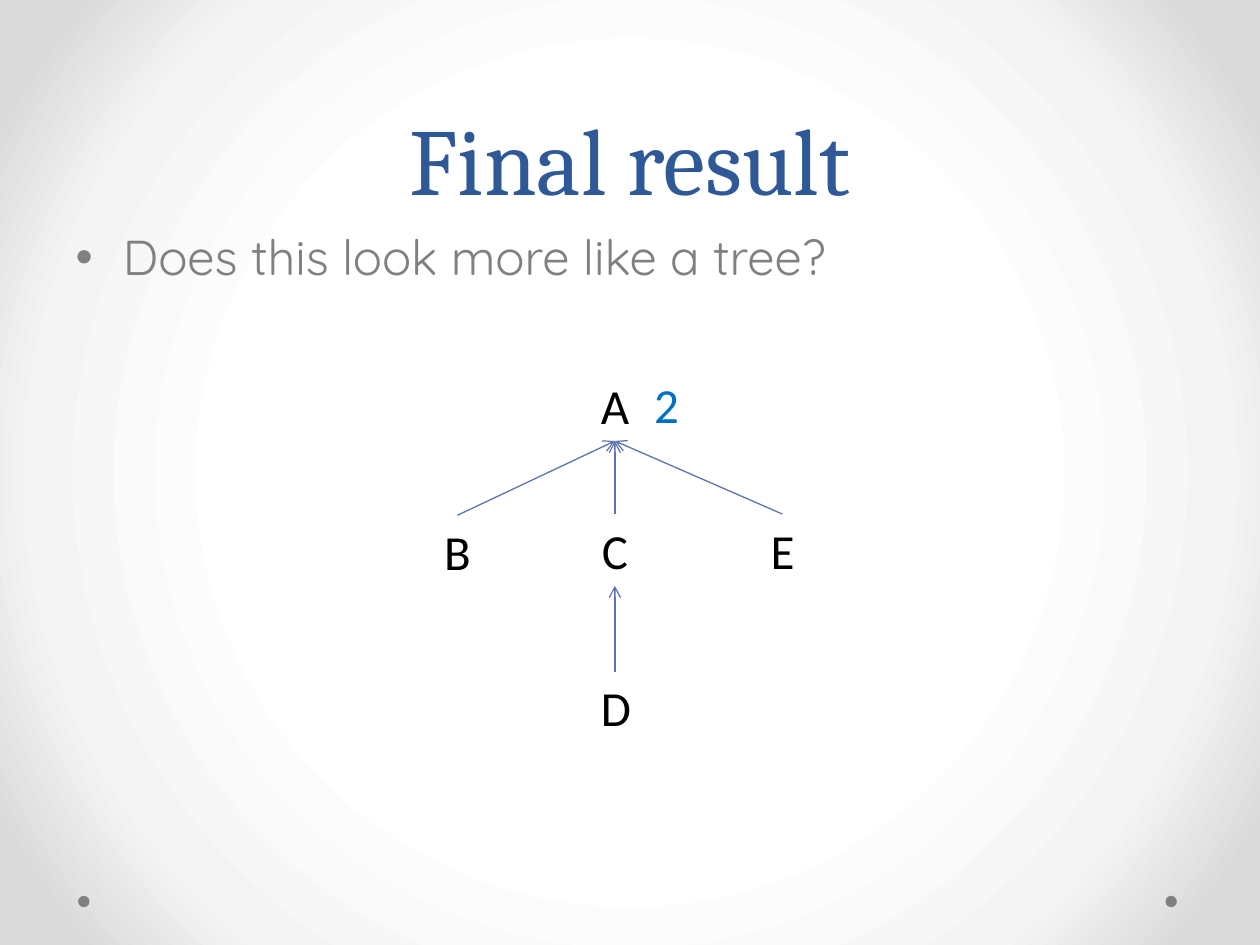
import pptx
import pptx.dml.color
import pptx.enum.shapes
import pptx.enum.text
import pptx.oxml
import pptx.oxml.ns
import pptx.util
from lxml import etree

Inches = pptx.util.Inches
RGBColor = pptx.dml.color.RGBColor
qn = pptx.oxml.ns.qn

NAVY = RGBColor(0x2F, 0x58, 0x97)
GRAY = RGBColor(0x80, 0x80, 0x80)
BLACK = RGBColor(0, 0, 0)
BLUE = RGBColor(0x00, 0x70, 0xC0)
ARROW = RGBColor(0x5C, 0x72, 0xB2)
BACKGROUND_STOPS = [(50, "FFFFFF"), (76, "F4F4F4"), (92, "DADADA")]

LABEL_WIDTH, LABEL_HEIGHT = 0.42, 0.57


class TreeSlide:
    """Holds the style and the current slide."""

    label_font = "Calibri"
    label_size = 28

    def __init__(self, page):
        self.page = page

    def background(self, stops):
        fill = self.page.background.fill
        fill.solid()
        solid = next(self.page.element.iter(qn("a:solidFill")))
        marks = "".join(
            f'<a:gs pos="{place * 1000}"><a:srgbClr val="{color}"/></a:gs>'
            for place, color in stops)
        gradient = pptx.oxml.parse_xml(
            f'<a:gradFill {pptx.oxml.ns.nsdecls("a")} rotWithShape="1">'
            f'<a:gsLst>{marks}</a:gsLst><a:path path="circle">'
            '<a:fillToRect l="50000" t="50000" r="50000" b="50000"/>'
            '</a:path></a:gradFill>')
        solid.getparent().replace(solid, gradient)

    def style(self, para, font, size, color):
        for span in para.runs:
            span.font.name = font
            span.font.size = pptx.util.Pt(size)
            span.font.color.rgb = color

    def placeholder(self, box, text, top, height, font, size, color):
        box.left, box.top = Inches(0.5), Inches(top)
        box.width, box.height = Inches(9), Inches(height)
        box.text_frame.text = text
        para = box.text_frame.paragraphs[0]
        self.style(para, font, size, color)
        return para

    def dot(self, left, top, size):
        dot = self.page.shapes.add_shape(
            pptx.enum.shapes.MSO_SHAPE.OVAL,
            Inches(left), Inches(top), Inches(size), Inches(size))
        dot.shadow.inherit = False
        dot.fill.solid()
        dot.fill.fore_color.rgb = GRAY
        dot.line.fill.background()

    def label(self, text, left, top, color):
        box = self.page.shapes.add_textbox(
            Inches(left), Inches(top), Inches(LABEL_WIDTH), Inches(LABEL_HEIGHT))
        frame = box.text_frame
        frame.word_wrap = True
        frame.auto_size = pptx.enum.text.MSO_AUTO_SIZE.SHAPE_TO_FIT_TEXT
        frame.text = text
        para = frame.paragraphs[0]
        para.alignment = pptx.enum.text.PP_ALIGN.CENTER
        self.style(para, self.label_font, self.label_size, color)

    def arrow(self, start, end):
        line = self.page.shapes.add_connector(
            pptx.enum.shapes.MSO_CONNECTOR.STRAIGHT,
            *(Inches(value) for value in (*start, *end)))
        line.line.color.rgb = ARROW
        line.line.width = pptx.util.Pt(0.75)
        etree.SubElement(line.line._get_or_add_ln(), qn("a:tailEnd"), type="arrow")
        etree.SubElement(line._element.spPr, qn("a:effectLst"))


def main():
    deck = pptx.Presentation()
    deck.slide_width, deck.slide_height = Inches(10), Inches(7.5)
    page = deck.slides.add_slide(deck.slide_layouts[1])
    slide = TreeSlide(page)

    # Background and corner dots
    slide.background(BACKGROUND_STOPS)
    for left in (9.25, 0.62):
        slide.dot(left, 7.11, 0.09)

    # Title and body
    title, body = page.placeholders
    para = slide.placeholder(title, "Final result", 0, 1.75, "Cambria", 54, NAVY)
    para.alignment = pptx.enum.text.PP_ALIGN.CENTER
    para.line_spacing = pptx.util.Pt(58)
    title.text_frame.vertical_anchor = pptx.enum.text.MSO_ANCHOR.BOTTOM
    slide.placeholder(body, "Does this look more like a tree?",
                      1.75, 5.33, "Quicksand", 28, GRAY)

    # Tree nodes: left and top of each label
    nodes = {
        "A": (4.67, 2.93),
        "B": (3.42, 4.09),
        "C": (4.67, 4.08),
        "D": (4.67, 5.33),
        "E": (6, 4.08),
    }
    for name, (left, top) in nodes.items():
        slide.label(name, left, top, BLACK)

    # Arrows from the top of each child to the bottom of its parent
    for child, parent in ("BA", "CA", "EA", "DC"):
        child_left, child_top = nodes[child]
        parent_left, parent_top = nodes[parent]
        slide.arrow((child_left + LABEL_WIDTH / 2, child_top),
                    (parent_left + LABEL_WIDTH / 2, parent_top + LABEL_HEIGHT))

    # Rank of the root
    slide.label("2", 5.08, 2.92, BLUE)

    deck.save("out.pptx")


if __name__ == "__main__":
    main()
